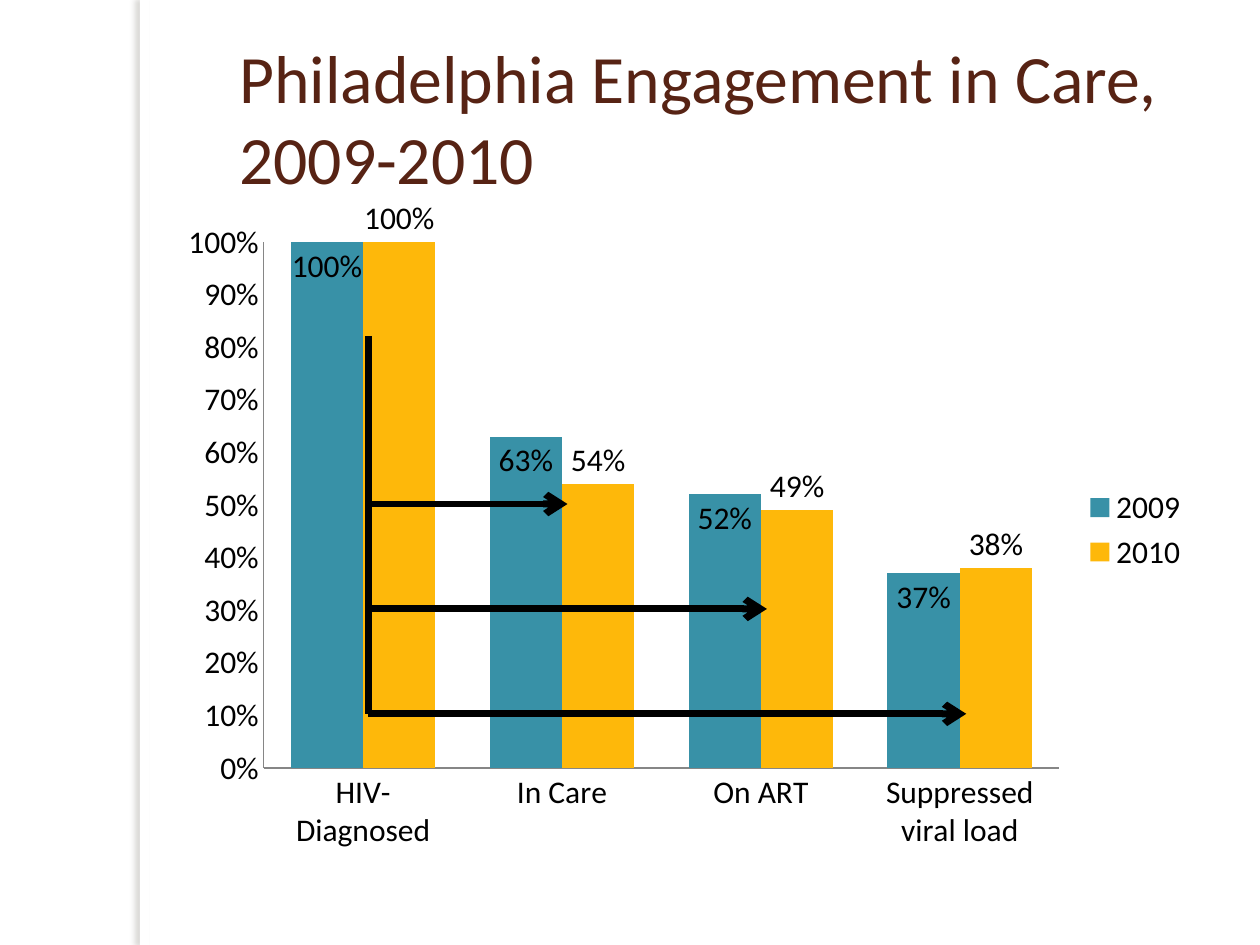
from dataclasses import dataclass

import lxml.etree
import pptx
import pptx.chart.data
import pptx.dml.color
import pptx.enum.chart
import pptx.enum.shapes
import pptx.enum.text
import pptx.oxml
import pptx.oxml.ns
import pptx.util
from pptx.util import Cm

FONT = "Calibri"
COLORS = {
    "white": "FFFFFF",
    "title": "572314",
    "black": "000000",
    "axis": "868686",
    "shadow": "736F63",
    "teal": "3891A7",
    "gold": "FEB80A",
}
NAMESPACES = (
    'xmlns:a="http://schemas.openxmlformats.org/drawingml/2006/main" '
    'xmlns:c="http://schemas.openxmlformats.org/drawingml/2006/chart"'
)
LABEL = pptx.enum.chart.XL_LABEL_POSITION


@dataclass(frozen=True)
class YearSeries:
    name: str
    values: tuple[float, ...]
    color: str
    label_position: LABEL


@dataclass(frozen=True)
class Stroke:
    start: tuple[float, float]
    end: tuple[float, float]
    arrow: bool = True


CATEGORIES = ("HIV-Diagnosed", "In Care", "On ART", "Suppressed viral load")
YEARS = (
    YearSeries("2009", (1, 0.63, 0.52, 0.37), "teal", LABEL.INSIDE_END),
    YearSeries("2010", (1, 0.54, 0.49, 0.38), "gold", LABEL.OUTSIDE_END),
)
STEM_X, STEM_TOP, STEM_BOTTOM = 7.42, 6.77, 14.39
FIRST_ARROW_Y = 10.16
ROW_STEP = (STEM_BOTTOM - FIRST_ARROW_Y) / 2
CATEGORY_STEP = 4.02
STROKES = [Stroke((STEM_X, STEM_TOP), (STEM_X, STEM_BOTTOM), arrow=False)] + [
    Stroke(
        (STEM_X, FIRST_ARROW_Y + row * ROW_STEP),
        (STEM_X + (row + 1) * CATEGORY_STEP, FIRST_ARROW_Y + row * ROW_STEP),
    )
    for row in range(3)
]


def rgb(name: str) -> pptx.dml.color.RGBColor:
    return pptx.dml.color.RGBColor.from_string(COLORS[name])


def add_side_strip(page) -> None:
    strip = page.shapes.add_shape(
        pptx.enum.shapes.MSO_SHAPE.RECTANGLE, Cm(2.82), 0, Cm(0.2), Cm(19.05)
    )
    strip.fill.solid()
    strip.fill.fore_color.rgb = rgb("white")
    strip.line.fill.background()
    strip.shadow.inherit = False
    effects = strip.element.spPr.find(pptx.oxml.ns.qn("a:effectLst"))
    effects.append(pptx.oxml.parse_xml(
        f'<a:outerShdw {NAMESPACES} blurRad="38100" dist="38100" dir="10800000" '
        f'algn="tl" rotWithShape="0"><a:srgbClr val="{COLORS["shadow"]}">'
        '<a:alpha val="25000"/></a:srgbClr></a:outerShdw>'
    ))


def format_title(page) -> None:
    title = page.shapes.title
    title.left, title.top, title.width, title.height = (
        Cm(4.57), Cm(0.76), Cm(20.83), Cm(3.18)
    )
    frame = title.text_frame
    frame.text = "Philadelphia Engagement in Care, 2009-2010"
    frame.word_wrap = True
    frame.auto_size = pptx.enum.text.MSO_AUTO_SIZE.NONE
    frame.vertical_anchor = pptx.enum.text.MSO_ANCHOR.MIDDLE
    para = frame.paragraphs[0]
    para.alignment = pptx.enum.text.PP_ALIGN.LEFT
    para.font.name = FONT
    para.font.size = pptx.util.Pt(38.7)
    para.font.color.rgb = rgb("title")


def place_plot(chart) -> None:
    plot_area = chart.element.find(".//" + pptx.oxml.ns.qn("c:plotArea"))
    for layout in plot_area.findall(pptx.oxml.ns.qn("c:layout")):
        plot_area.remove(layout)
    sizes = "".join(
        f'<c:{key} val="{value}"/>'
        for key, value in (("x", 0.093), ("y", 0.065), ("w", 0.77), ("h", 0.795))
    )
    plot_area.insert(0, pptx.oxml.parse_xml(
        f'<c:layout {NAMESPACES}><c:manualLayout><c:layoutTarget val="inner"/>'
        f'<c:xMode val="edge"/><c:yMode val="edge"/>{sizes}'
        '</c:manualLayout></c:layout>'
    ))


def add_care_chart(page) -> None:
    data = pptx.chart.data.CategoryChartData(number_format="0%")
    data.categories = CATEGORIES
    for year in YEARS:
        data.add_series(year.name, year.values)
    chart = page.shapes.add_chart(
        pptx.enum.chart.XL_CHART_TYPE.COLUMN_CLUSTERED,
        Cm(3.38), Cm(4.01), Cm(20.83), Cm(13.34), data,
    ).chart
    chart.has_title = False
    chart.font.name = FONT
    chart.font.size = pptx.util.Pt(18)
    chart.font.color.rgb = rgb("black")
    chart.has_legend = True
    chart.legend.position = pptx.enum.chart.XL_LEGEND_POSITION.RIGHT
    chart.legend.include_in_layout = False

    for axis in (chart.category_axis, chart.value_axis):
        axis.has_major_gridlines = False
        axis.major_tick_mark = pptx.enum.chart.XL_TICK_MARK.NONE
        axis.minor_tick_mark = pptx.enum.chart.XL_TICK_MARK.NONE
        axis.format.line.color.rgb = rgb("axis")
    chart.value_axis.minimum_scale = 0
    chart.value_axis.maximum_scale = 1
    chart.value_axis.major_unit = 0.1
    chart.value_axis.tick_labels.number_format = "0%"
    chart.value_axis.tick_labels.number_format_is_linked = False

    plot = chart.plots[0]
    plot.gap_width = 75
    plot.overlap = 0
    plot.vary_by_categories = False
    for year, series in zip(YEARS, plot.series):
        series.format.fill.solid()
        series.format.fill.fore_color.rgb = rgb(year.color)
        labels = series.data_labels
        labels.show_value = True
        labels.number_format = "0%"
        labels.number_format_is_linked = False
        labels.position = year.label_position
    place_plot(chart)


def add_stroke(page, stroke: Stroke) -> None:
    connector = page.shapes.add_connector(
        pptx.enum.shapes.MSO_CONNECTOR.STRAIGHT,
        *(Cm(value) for value in stroke.start + stroke.end),
    )
    connector.line.color.rgb = rgb("black")
    connector.line.width = pptx.util.Pt(4)
    properties = connector.element.spPr
    if stroke.arrow:
        line = properties.find(pptx.oxml.ns.qn("a:ln"))
        tail = lxml.etree.SubElement(line, pptx.oxml.ns.qn("a:tailEnd"))
        tail.set("type", "arrow")
    lxml.etree.SubElement(properties, pptx.oxml.ns.qn("a:effectLst"))


def main() -> None:
    deck = pptx.Presentation()
    deck.slide_width, deck.slide_height = Cm(25.4), Cm(19.05)
    page = deck.slides.add_slide(deck.slide_layouts[5])
    add_side_strip(page)
    format_title(page)
    add_care_chart(page)
    for stroke in STROKES:
        add_stroke(page, stroke)
    deck.save("out.pptx")


if __name__ == "__main__":
    main()
